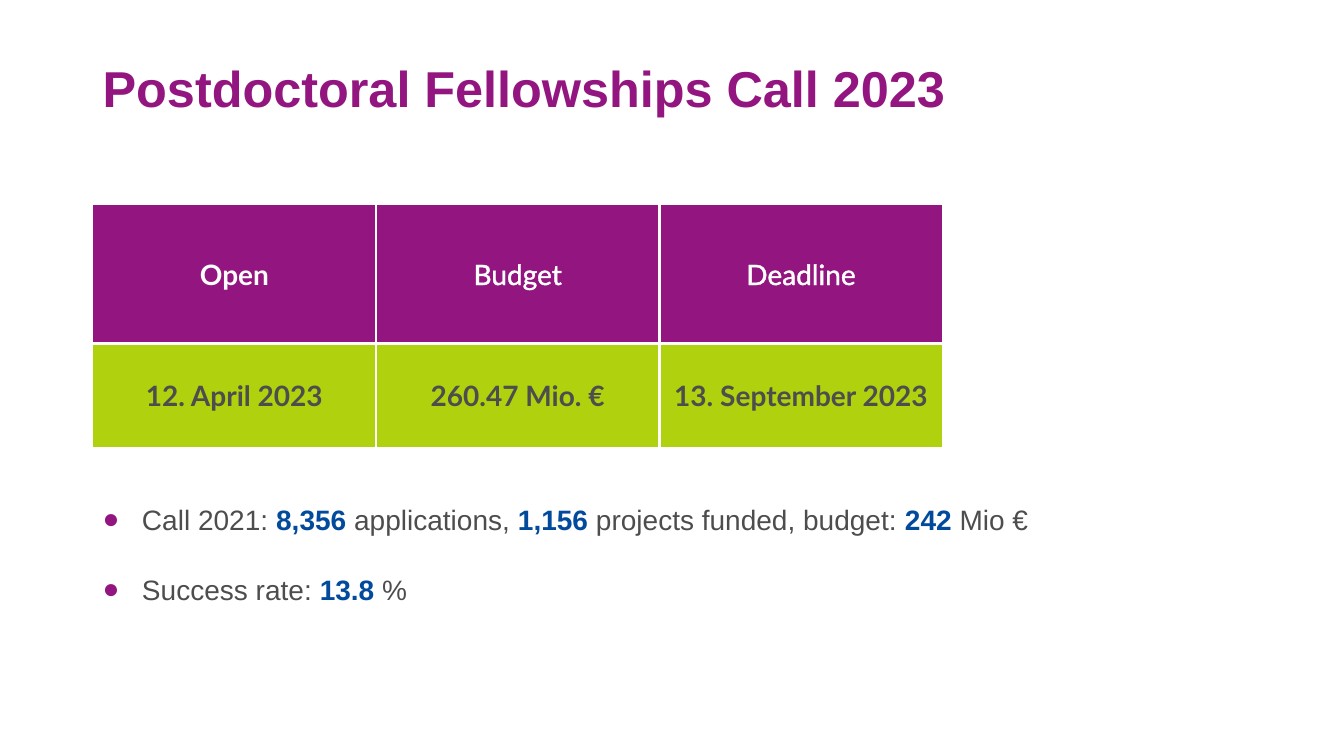
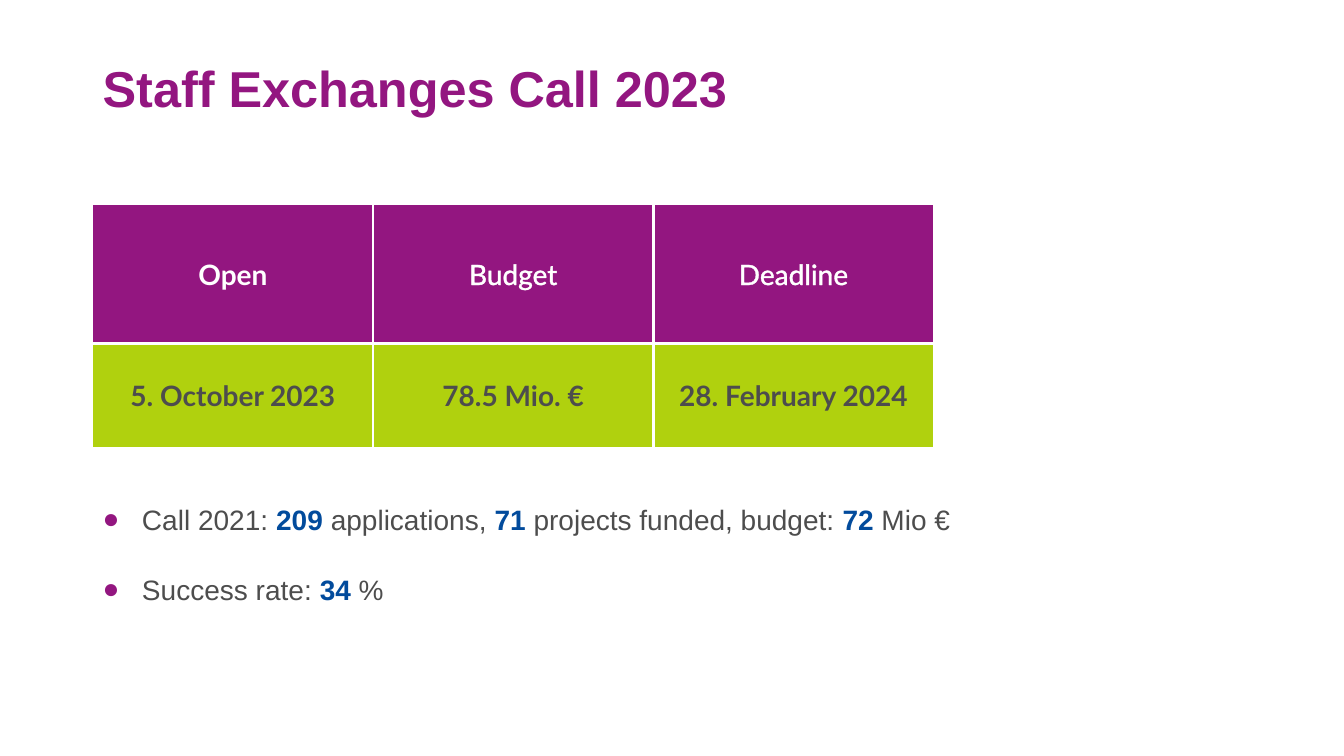
"""Build two slides on the 2023 fellowship and staff exchange calls."""
from dataclasses import dataclass

from lxml.etree import SubElement
from pptx import Presentation
from pptx.dml.color import RGBColor as Color
from pptx.enum.text import MSO_ANCHOR as Anchor, PP_ALIGN as Align
from pptx.oxml import parse_xml
from pptx.oxml.ns import nsdecls, qn
from pptx.util import Emu, Pt

CALLS = [
    {
        "title": "Postdoctoral Fellowships Call 2023",
        "facts": ["12. April 2023", "260.47 Mio. €", "13. September 2023"],
        "column": 281,
        "bullets": [
            ["Call 2021: ", "8,356", " applications, ", "1,156",
             " projects funded, budget: ", "242", " Mio €"],
            ["Success rate: ", "13.8", " %"],
        ],
    },
    {
        "title": "Staff Exchanges Call 2023",
        "facts": ["5. October 2023", "78.5 Mio. €", "28. February 2024"],
        "column": 278,
        "bullets": [
            ["Call 2021: ", "209", " applications, ", "71",
             " projects funded, budget: ", "72", " Mio €"],
            ["Success rate: ", "34", " %"],
        ],
    },
]
HEADINGS = ["Open", "Budget", "Deadline"]


@dataclass(frozen=True)
class Theme:
    purple: str = "931680"
    green: str = "B0D10E"
    blue: str = "024B9C"
    gray: str = "4D4D4D"
    white: str = "FFFFFF"
    text_font: str = "Arial"
    table_font: str = "Lato"
    title_size: int = 36
    body_size: int = 20
    inner_border: float = 2.25
    outer_border: float = 1
    text_outline: float = 0.75


THEME = Theme()
PAGE = (1333, 750)
TITLE_BOX = (92, 51, 1150, 66)
BULLET_BOX = (92, 477, 1113, 140)
TABLE_ORIGIN = (92, 203)
ROW_HEIGHTS = (138, 103)
BULLET_INDENT = 39


def px(length):
    return Emu(length * 9144)


def set_font(font, name, size, color, bold):
    font.name, font.size, font.bold = name, Pt(size), bold
    font.color.rgb = Color.from_string(color)


def line_xml(tag, width, color):
    return parse_xml(
        f'<a:{tag} {nsdecls("a")} w="{Pt(width)}"><a:solidFill>'
        f'<a:srgbClr val="{color}"/></a:solidFill></a:{tag}>')


def add_box(slide, place):
    frame = slide.shapes.add_textbox(*map(px, place)).text_frame
    frame.word_wrap = True
    return frame


def add_title(slide, title):
    frame = add_box(slide, TITLE_BOX)
    frame.margin_bottom = 0
    frame.vertical_anchor = Anchor.BOTTOM
    para = frame.paragraphs[0]
    para.text = title
    set_font(para.font, THEME.text_font, THEME.title_size, THEME.purple, True)


def add_bullet_mark(para):
    props = para._p.get_or_add_pPr()
    props.set("marL", str(px(BULLET_INDENT)))
    props.set("indent", str(px(-BULLET_INDENT)))
    color = SubElement(props, qn("a:buClr"))
    SubElement(color, qn("a:srgbClr"), val=THEME.purple)
    SubElement(props, qn("a:buFont"), typeface=THEME.text_font)
    SubElement(props, qn("a:buChar"), char="●")


def add_bullets(slide, bullets):
    frame = add_box(slide, BULLET_BOX)
    for index, parts in enumerate(bullets):
        para = frame.add_paragraph() if index else frame.paragraphs[0]
        para.line_spacing = 1.5
        if index:
            para.space_before = Pt(14)
        add_bullet_mark(para)
        set_font(para.font, THEME.text_font, THEME.body_size, THEME.gray, False)
        for position, text in enumerate(parts):
            span = para.add_run()
            span.text = text
            strong = position % 2 == 1
            set_font(span.font, THEME.text_font, THEME.body_size,
                     THEME.blue if strong else THEME.gray, strong)


def style_cell(cell, row, column, text):
    header = row == 0
    outlined = header and column > 0
    cell.vertical_anchor = Anchor.MIDDLE
    para = cell.text_frame.paragraphs[0]
    para.alignment = Align.CENTER
    span = para.add_run()
    span.text = text
    set_font(span.font, THEME.table_font, THEME.body_size,
             THEME.white if header else THEME.gray, not outlined)
    if outlined:
        span.font._element.insert(0, line_xml("ln", THEME.text_outline, THEME.white))
    outer_sides = {"lnL": column == 0, "lnR": column == len(HEADINGS) - 1,
                   "lnT": header, "lnB": not header}
    props = cell._tc.get_or_add_tcPr()
    for tag, outer in outer_sides.items():
        width = THEME.outer_border if outer else THEME.inner_border
        props.append(line_xml(tag, width, THEME.white))
    cell.fill.solid()
    cell.fill.fore_color.rgb = Color.from_string(
        THEME.purple if header else THEME.green)


def add_facts(slide, facts, column_width):
    rows = [HEADINGS, facts]
    size = (column_width * len(HEADINGS), sum(ROW_HEIGHTS))
    table = slide.shapes.add_table(
        len(rows), len(HEADINGS), *map(px, TABLE_ORIGIN + size)).table
    table.horz_banding = False
    for column in table.columns:
        column.width = px(column_width)
    for row, texts in enumerate(rows):
        table.rows[row].height = px(ROW_HEIGHTS[row])
        for column, text in enumerate(texts):
            style_cell(table.cell(row, column), row, column, text)


def main():
    deck = Presentation()
    deck.slide_width, deck.slide_height = map(px, PAGE)
    for call in CALLS:
        slide = deck.slides.add_slide(deck.slide_layouts[6])
        add_title(slide, call["title"])
        add_bullets(slide, call["bullets"])
        add_facts(slide, call["facts"], call["column"])
    deck.save("out.pptx")


if __name__ == "__main__":
    main()
